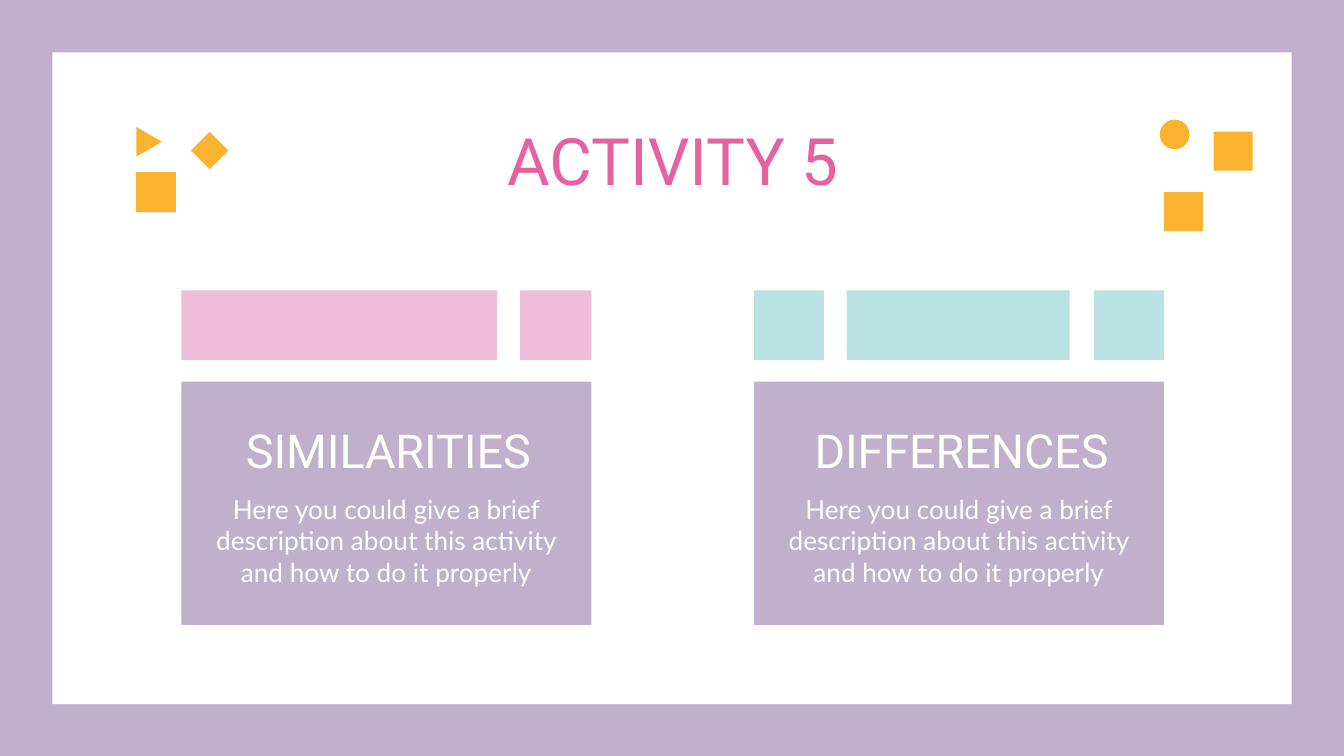
from pptx import Presentation
from pptx.dml.color import RGBColor
from pptx.enum.shapes import MSO_SHAPE
from pptx.enum.text import MSO_ANCHOR, MSO_AUTO_SIZE, PP_ALIGN
from pptx.oxml.ns import qn
from pptx.util import Inches, Pt
from lxml import etree

RECT, DIAMOND = MSO_SHAPE.RECTANGLE, MSO_SHAPE.DIAMOND
TRIANGLE, OVAL = MSO_SHAPE.ISOSCELES_TRIANGLE, MSO_SHAPE.OVAL
TOP, MIDDLE, BOTTOM = MSO_ANCHOR.TOP, MSO_ANCHOR.MIDDLE, MSO_ANCHOR.BOTTOM
CENTER, NO_FIT = PP_ALIGN.CENTER, MSO_AUTO_SIZE.NONE

COLORS = {name: RGBColor.from_string(value) for name, value in {
    "lilac": "C0B0CC",
    "white": "FFFFFF",
    "magenta": "E562A0",
    "pink": "EEBDD6",
    "aqua": "BBE2E2",
    "amber": "FAB32E",
}.items()}

deck = Presentation()
deck.slide_width, deck.slide_height = Inches(10), Inches(5.625)
CELL = deck.slide_width / 100
slide = deck.slides.add_slide(deck.slide_layouts[4])
slide.background.fill.solid()
slide.background.fill.fore_color.rgb = COLORS["lilac"]


def add_block(kind, color, left, top, width, height, turn=0):
    block = slide.shapes.add_shape(kind, *(round(n * CELL) for n in (left, top, width, height)))
    block.fill.solid()
    block.fill.fore_color.rgb = COLORS[color]
    block.line.fill.background()
    block.shadow.inherit = False
    block.rotation = turn
    return block


def write(holder, words, area, font, size, color, anchor, spacing=1.0):
    holder.left, holder.top, holder.width, holder.height = (round(n * CELL) for n in area)
    frame = holder.text_frame
    frame.text = words
    frame.word_wrap = True
    frame.auto_size = NO_FIT
    frame.vertical_anchor = anchor
    frame.margin_left = frame.margin_right = frame.margin_top = frame.margin_bottom = Inches(0.1)
    line = frame.paragraphs[0]
    line.alignment = CENTER
    line.line_spacing = spacing
    line.space_before = Pt(0)
    properties = line._p.get_or_add_pPr()
    properties.set("marL", "0")
    properties.set("indent", "0")
    etree.SubElement(properties, qn("a:buNone"))
    run = line.runs[0]
    run.font.name, run.font.size, run.font.bold = font, Pt(size), False
    run.font.color.rgb = COLORS[color]


panel = add_block(RECT, "white", 3.9, 3.9, 92.2, 48.5)
slide.shapes._spTree.insert(2, panel._element)

write(slide.shapes.title, "ACTIVITY 5", (8.5, 9.1, 83.1, 6.3), "Roboto", 35, "magenta", TOP, 0.8)

DESCRIPTION = "Here you could give a brief description about this activity and how to do it properly"
cards = [
    ("SIMILARITIES", 13.5, 14, 29.8, 1, "pink", [(0, 23.5), (25.2, 5.3)]),
    ("DIFFERENCES", 56.1, 56.3, 30.5, 3, "aqua", [(0, 5.2), (6.9, 16.6), (25.3, 5.2)]),
]
for heading, left, heading_left, heading_width, index, color, bars in cards:
    card = slide.placeholders[index]
    card.fill.solid()
    card.fill.fore_color.rgb = COLORS["lilac"]
    write(card, DESCRIPTION, (left, 28.4, 30.5, 18.1), "Lato", 14, "white", BOTTOM)
    card.text_frame.margin_left = card.text_frame.margin_right = Inches(0.15)
    card.text_frame.margin_bottom = Inches(0.28)
    write(slide.placeholders[index + 1], heading, (heading_left, 30.3, heading_width, 6.3),
          "Roboto", 25, "white", MIDDLE)
    for offset, width in bars:
        add_block(RECT, color, left + offset, 21.6, width, 5.2)

confetti = [
    (DIAMOND, 9.5, 12.2, 4.2, 4.2, 315),
    (DIAMOND, 14.2, 9.8, 2.8, 2.8, 0),
    (TRIANGLE, 10, 9.6, 2.2, 1.9, 90),
    (RECT, 90.3, 9.8, 2.9, 2.9, 0),
    (RECT, 86.6, 14.3, 2.9, 2.9, 0),
    (OVAL, 86.3, 8.9, 2.2, 2.2, 0),
]
for kind, *area, turn in confetti:
    add_block(kind, "amber", *area, turn)

deck.save("out.pptx")
